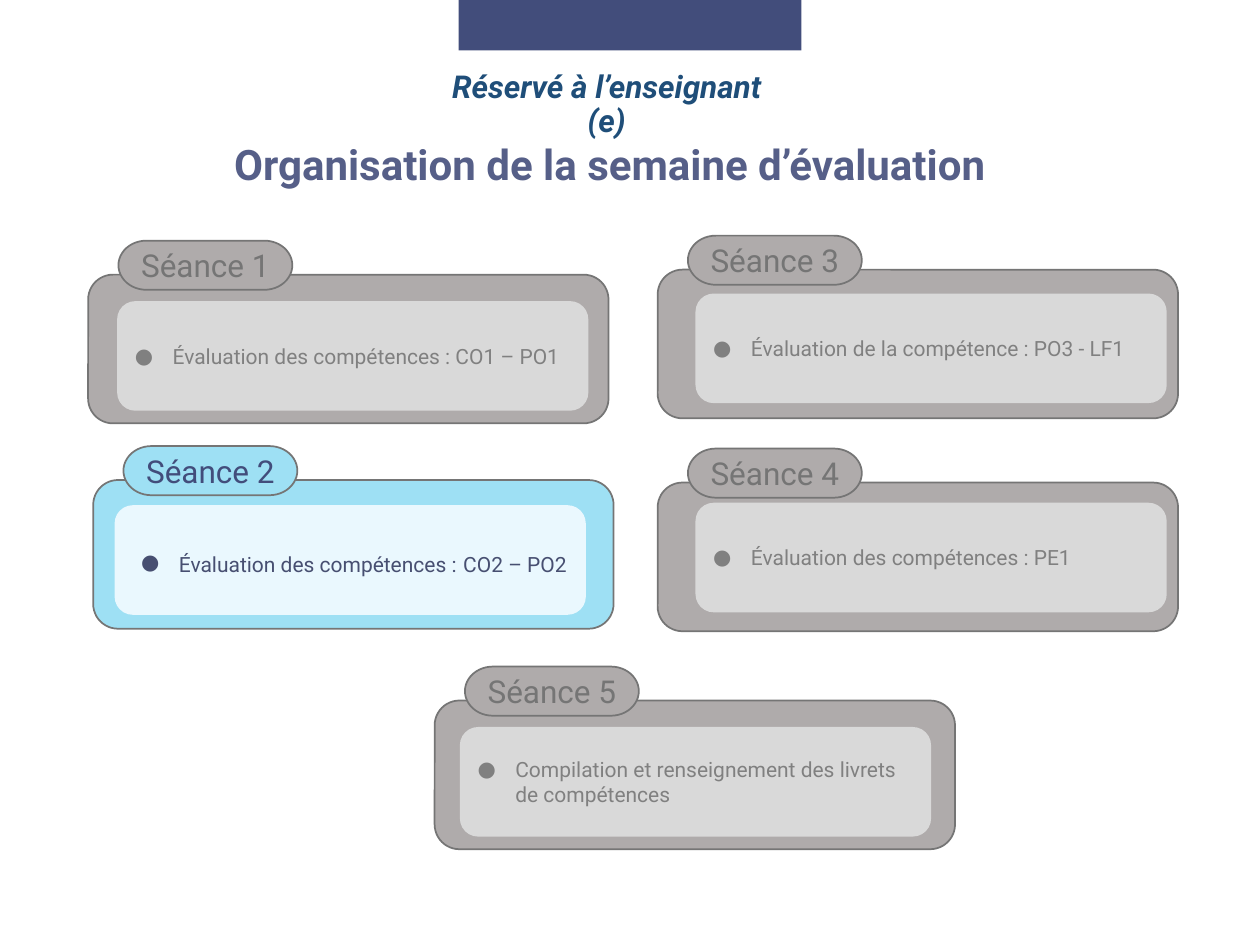
from lxml import etree
from pptx import Presentation
from pptx import util as u
from pptx.dml.color import RGBColor
from pptx.enum import shapes, text
from pptx.oxml.ns import qn

FONT = "Roboto"
NAVY = RGBColor(0x42, 0x4D, 0x7B)
TITLE = RGBColor(0x56, 0x5F, 0x88)
NOTE = RGBColor(0x1F, 0x4E, 0x79)
OUTLINE = RGBColor(0x75, 0x75, 0x75)
GREY = RGBColor(0xAF, 0xAB, 0xAB)
PALE_GREY = RGBColor(0xD9, 0xD9, 0xD9)
TEXT_GREY = RGBColor(0x80, 0x80, 0x80)
BLUE = RGBColor(0x9E, 0xE0, 0xF4)
PALE_BLUE = RGBColor(0xEA, 0xF8, 0xFE)
TEXT_BLUE = RGBColor(0x47, 0x4F, 0x71)

# Colours of a card: body, tab text, panel, panel text
MUTED = (GREY, OUTLINE, PALE_GREY, TEXT_GREY)
ACTIVE = (BLUE, NAVY, PALE_BLUE, TEXT_BLUE)

# Session, body corner, panel corner, text corner, colours, text runs with sizes
SESSIONS = [
    ("Séance 3", (5.22, 2.14), (5.52, 2.33), (5.52, 2.33), MUTED,
     [("Évaluation de la compétence : PO3 - LF1", 12)]),
    ("Séance 1", (0.70, 2.18), (0.93, 2.39), (0.93, 2.39), MUTED,
     [("Évaluation des compétences : CO1 – PO1", 12)]),
    ("Séance 4", (5.22, 3.83), (5.52, 3.99), (5.52, 3.99), MUTED,
     [("Évaluation des compétences : PE1", 12)]),
    ("Séance 5", (3.45, 5.56), (3.69 - 0.04, 5.77), (3.65, 5.77), MUTED,
     [("Compilation et renseignement des livrets de compétences", 12)]),
    ("Séance 2", (0.74, 3.81), (0.91, 4.01), (0.98, 4.03), ACTIVE,
     [("Évaluation des compétences :", 12), (" ", 14), ("CO2 – PO2", 12)]),
]
BODY_SIZE = (4.13, 1.18)
TAB_SIZE = (1.38, 0.39)
TAB_SHIFT = (0.24, -0.27)
PANEL_SIZE = (3.74, 0.87)


def add_run(p, content, size, color, bold=False, italic=False):
    r = p.add_run()
    r.text = content
    r.font.name = FONT
    r.font.size = u.Pt(size)
    r.font.color.rgb = color
    r.font.bold = bold
    r.font.italic = italic


def add_block(s, kind, corner, size, fill=None, line=None):
    sp = s.shapes.add_shape(kind, *[u.Inches(v) for v in (*corner, *size)])
    sp.shadow.inherit = False
    if fill is None:
        sp.fill.background()
    else:
        sp.fill.solid()
        sp.fill.fore_color.rgb = fill
    if line is None:
        sp.line.fill.background()
    else:
        sp.line.color.rgb = line
        sp.line.width = u.Pt(1)
    sp.text_frame.vertical_anchor = text.MSO_ANCHOR.MIDDLE
    return sp


def add_bullet(p, color):
    pPr = p._p.get_or_add_pPr()
    pPr.set("marL", str(u.Inches(0.3)))
    pPr.set("indent", str(-u.Inches(0.3)))
    bu_color = etree.SubElement(pPr, qn("a:buClr"))
    etree.SubElement(bu_color, qn("a:srgbClr"), val=str(color))
    etree.SubElement(pPr, qn("a:buFont"), typeface=FONT)
    etree.SubElement(pPr, qn("a:buChar"), char="●")


def add_header(s):
    # Title
    title = s.shapes.title
    title.left, title.top = u.Inches(0.57), u.Inches(0.93)
    title.width, title.height = u.Inches(8.62), u.Inches(0.79)
    title.text_frame.vertical_anchor = text.MSO_ANCHOR.MIDDLE
    p = title.text_frame.paragraphs[0]
    p.alignment = text.PP_ALIGN.CENTER
    p.line_spacing = 0.9
    add_run(p, "Organisation de la semaine d’évaluation ", 24, TITLE, bold=True)

    # Top band
    add_block(s, shapes.MSO_SHAPE.RECTANGLE, (3.64, 0), (2.72, 0.4), NAVY)

    # Note for the teacher
    box = s.shapes.add_textbox(u.Inches(3.36), u.Inches(0.52),
                               u.Inches(2.91), u.Inches(0.67))
    tf = box.text_frame
    tf.word_wrap = True
    p = tf.paragraphs[0]
    p.alignment = text.PP_ALIGN.CENTER
    p.line_spacing = 0.9
    add_run(p, "Réservé à l’enseignant (e)", 18, NOTE, bold=True, italic=True)


def add_session(s, name, corner, panel_corner, text_corner, colors, runs):
    body_fill, tab_color, panel_fill, text_color = colors
    rounded = shapes.MSO_SHAPE.ROUNDED_RECTANGLE

    # Body and tab
    add_block(s, rounded, corner, BODY_SIZE, body_fill, OUTLINE)
    tab_corner = [c + d for c, d in zip(corner, TAB_SHIFT)]
    tab = add_block(s, shapes.MSO_SHAPE.FLOWCHART_TERMINATOR, tab_corner,
                    TAB_SIZE, body_fill, OUTLINE)
    tab.text_frame.word_wrap = False
    p = tab.text_frame.paragraphs[0]
    p.alignment = text.PP_ALIGN.CENTER
    add_run(p, name, 18, tab_color)

    # Panel, with its text on a layer of its own where the two are offset
    panel = add_block(s, rounded, panel_corner, PANEL_SIZE, panel_fill)
    if text_corner != panel_corner and colors is ACTIVE:
        panel = add_block(s, rounded, text_corner, PANEL_SIZE)
    p = panel.text_frame.paragraphs[0]
    p.alignment = text.PP_ALIGN.LEFT
    add_bullet(p, text_color)
    for content, size in runs:
        add_run(p, content, size, text_color)


def main():
    prs = Presentation()
    prs.slide_width, prs.slide_height = u.Inches(10), u.Inches(7.5)
    s = prs.slides.add_slide(prs.slide_layouts[5])
    add_header(s)
    for session in SESSIONS:
        add_session(s, *session)
    prs.save("out.pptx")


if __name__ == "__main__":
    main()
